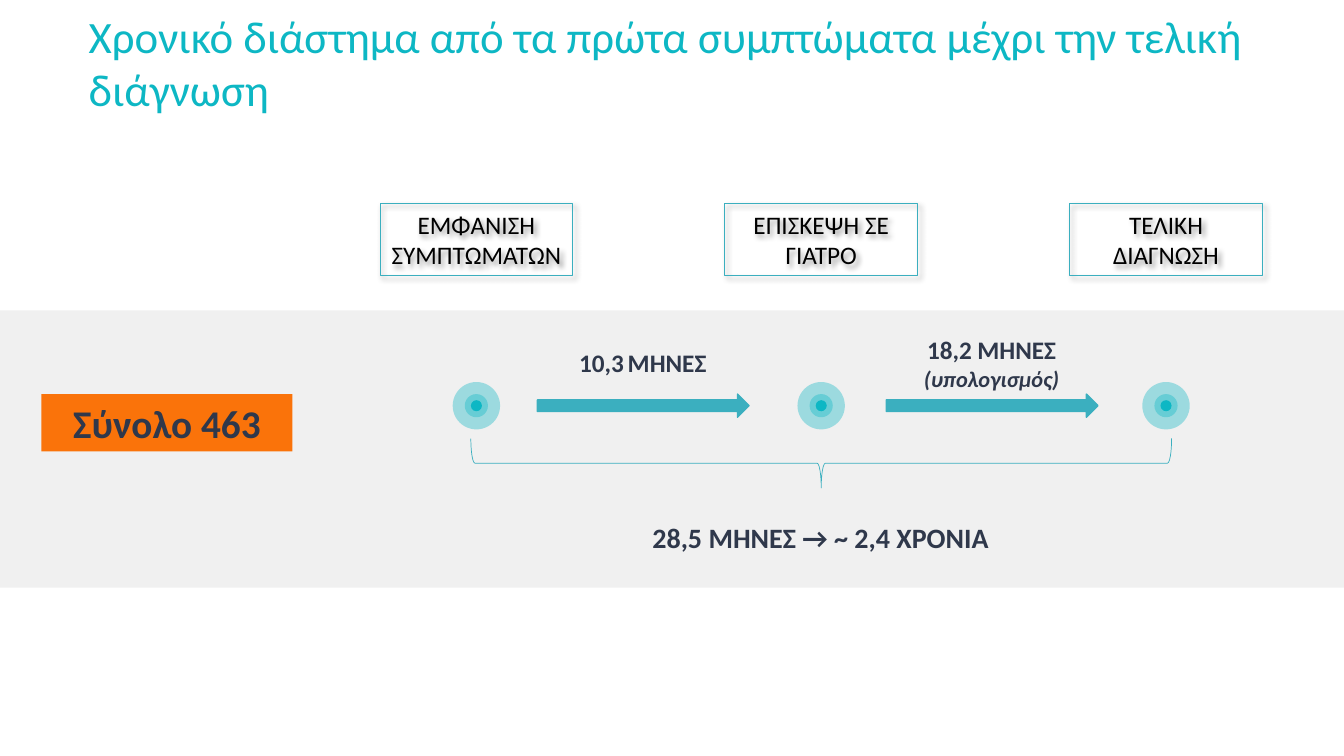
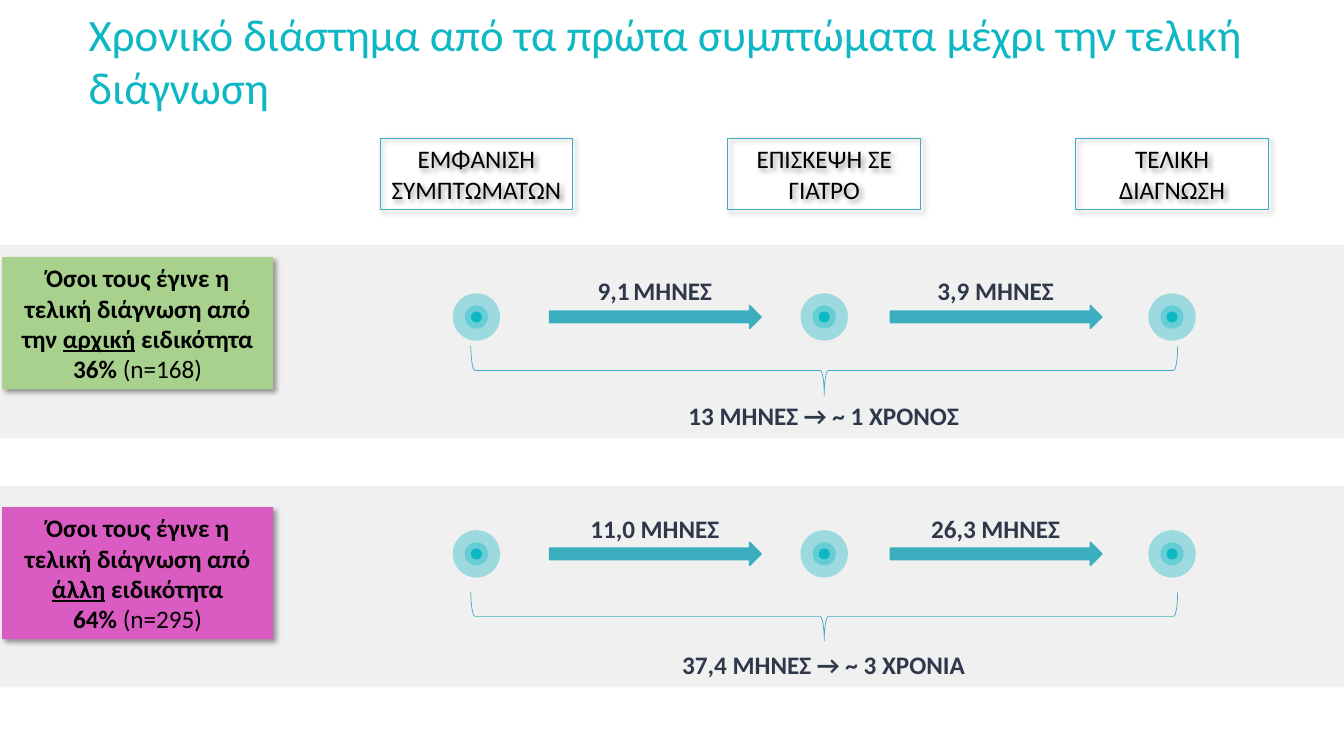
from dataclasses import dataclass

from lxml.etree import SubElement
from pptx import Presentation
from pptx.dml.color import RGBColor
from pptx.enum.shapes import MSO_SHAPE as SHAPE
from pptx.enum.text import MSO_ANCHOR as ANCHOR, MSO_AUTO_SIZE as AUTO, PP_ALIGN as ALIGN
from pptx.oxml.ns import qn
from pptx.util import Pt

PX = 9144
SLIDE_W, SLIDE_H = 1333, 750
FONT = "Calibri"
BLACK = RGBColor(0x00, 0x00, 0x00)
INK = RGBColor(0x2F, 0x38, 0x4B)
TURQUOISE = RGBColor(0x0D, 0xB7, 0xC4)
TEAL = RGBColor(0x3B, 0xAF, 0xBF)
BAND = RGBColor(0xF0, 0xF0, 0xF0)
ORANGE = RGBColor(0xFA, 0x73, 0x0A)
GREEN = RGBColor(0xA9, 0xD1, 0x8E)
PINK = RGBColor(0xDA, 0x5C, 0xC2)

TITLE = "Χρονικό διάστημα από τα πρώτα συμπτώματα μέχρι την τελική διάγνωση"
STAGES = ["ΕΜΦΑΝΙΣΗ ΣΥΜΠΤΩΜΑΤΩΝ", "ΕΠΙΣΚΕΨΗ ΣΕ ΓΙΑΤΡΟ", "ΤΕΛΙΚΗ ΔΙΑΓΝΩΣΗ"]
STAGE_X, STAGE_W, STAGE_H = 377, 191, 71
DOT, DOT_RINGS = 47, [(47, 37), (23, 37), (11, None)]
ARROW_W, ARROW_H = 210, 23
LABEL_W, LABEL_H = 199, 40
BRACE_H, BRACE_OVERHANG = 49, 11
TOTAL_W = 390


@dataclass
class Tag:
    """Coloured caption at the left of a lane, placed relative to its band."""
    box: tuple
    color: RGBColor
    paragraphs: list
    size: int = 18
    ink: RGBColor = BLACK
    shadow: bool = True


@dataclass
class Lane:
    """One timeline band; vertical positions are relative to the band's top."""
    top: int
    height: int
    dot_y: int
    brace_y: int
    total_y: int
    label_ys: tuple
    labels: list
    total: str
    tag: Tag
    total_size: int = 18


def emu(*lengths):
    """Turn px into EMU."""
    return [round(v * PX) for v in lengths]


def write(shape, paragraphs, size, color, bold=False, align=ALIGN.CENTER, anchor=ANCHOR.TOP):
    """Fill a shape with paragraphs, each a string or a list of (text, font settings)."""
    tf = shape.text_frame
    tf.word_wrap = True
    tf.auto_size = AUTO.NONE
    tf.vertical_anchor = anchor
    for i, runs in enumerate(paragraphs):
        p = tf.add_paragraph() if i else tf.paragraphs[0]
        p.alignment = align
        for text, style in [(runs, {})] if isinstance(runs, str) else runs:
            r = p.add_run()
            r.text = text
            r.font.name, r.font.size, r.font.bold = FONT, Pt(size), bold
            r.font.color.rgb = color
            for key, value in style.items():
                setattr(r.font, key, value)
    return tf


def add_text(s, box, paragraphs, size, color=INK, bold=True):
    """Add a centred text box."""
    write(s.shapes.add_textbox(*emu(*box)), paragraphs, size, color, bold)


def add_shape(shapes, kind, box, fill=None, line=None, width=0.75, alpha=None, shadow=False):
    """Add a preset shape with its fill, line, transparency and shadow."""
    sp = shapes.add_shape(kind, *emu(*box))
    sp.shadow.inherit = False
    if fill is None:
        sp.fill.background()
    else:
        sp.fill.solid()
        sp.fill.fore_color.rgb = fill
    if line is None:
        sp.line.fill.background()
    else:
        sp.line.color.rgb = line
        sp.line.width = Pt(width)
    spPr = sp.element.spPr
    if alpha is not None:
        color = spPr.find(qn("a:solidFill")).find(qn("a:srgbClr"))
        SubElement(color, qn("a:alpha"), val=str(alpha * 1000))
    if shadow:
        outer = SubElement(spPr.find(qn("a:effectLst")), qn("a:outerShdw"),
                           blurRad=str(Pt(4)), dist=str(Pt(3)), dir="2700000",
                           algn="tl", rotWithShape="0")
        color = SubElement(outer, qn("a:srgbClr"), val=str(BLACK))
        SubElement(color, qn("a:alpha"), val="40000")
    return sp


def add_title(s, top):
    """Place and format the title placeholder."""
    sp = s.shapes.title
    sp.left, sp.top, sp.width, sp.height = emu(78, top, 1176, 128)
    tf = write(sp, [TITLE], 32, TURQUOISE, align=ALIGN.LEFT, anchor=ANCHOR.BOTTOM)
    tf.margin_left, tf.margin_top, tf.margin_right, tf.margin_bottom = emu(10, 10, 10, 10)
    tf.paragraphs[0].line_spacing = 1.0


def add_stages(s, top, step):
    """Draw the row of stage headings."""
    for i, stage in enumerate(STAGES):
        sp = add_shape(s.shapes, SHAPE.RECTANGLE, (STAGE_X + i * step, top, STAGE_W, STAGE_H),
                       line=TEAL, shadow=True)
        write(sp, [stage], 18, BLACK, anchor=ANCHOR.MIDDLE)


def add_dot(s, left, top):
    """Draw a milestone of concentric discs as one group."""
    group = s.shapes.add_group_shape()
    for size, alpha in DOT_RINGS:
        inset = (DOT - size) // 2
        add_shape(group.shapes, SHAPE.OVAL, (left + inset, top + inset, size, size),
                  TURQUOISE, alpha=alpha)


def add_brace(s, left, top, width):
    """Draw a horizontal brace that points down."""
    x, y = left + (width - BRACE_H) / 2, top + (BRACE_H - width) / 2
    sp = add_shape(s.shapes, SHAPE.LEFT_BRACE, (x, y, BRACE_H, width), line=TEAL, width=0.5)
    sp.rotation = 270


def add_tag(s, lane_top, tag):
    """Draw the caption of a lane."""
    x, y, w, h = tag.box
    sp = add_shape(s.shapes, SHAPE.RECTANGLE, (x, lane_top + y, w, h), tag.color, shadow=tag.shadow)
    write(sp, tag.paragraphs, tag.size, tag.ink, bold=True, anchor=ANCHOR.MIDDLE)


def add_lane(s, lane, step, arrow_xs):
    """Draw a band with its milestones, arrows, brace, total and caption."""
    add_shape(s.shapes, SHAPE.RECTANGLE, (0, lane.top, SLIDE_W, lane.height), BAND)
    dot_x, dot_top = STAGE_X + (STAGE_W - DOT) // 2, lane.top + lane.dot_y
    for i in range(len(STAGES)):
        add_dot(s, dot_x + i * step, dot_top)
    for x, y, label in zip(arrow_xs, lane.label_ys, lane.labels):
        add_shape(s.shapes, SHAPE.RIGHT_ARROW, (x, dot_top + 12, ARROW_W, ARROW_H),
                  TEAL, TEAL, 1)
        add_text(s, (x + 5, lane.top + y, LABEL_W, LABEL_H * len(label)), label, 18)
    brace_w = 2 * step + BRACE_OVERHANG
    center = dot_x + DOT // 2 + step
    add_brace(s, center - brace_w // 2, lane.top + lane.brace_y, brace_w)
    add_text(s, (center - TOTAL_W // 2, lane.top + lane.total_y, TOTAL_W, LABEL_H),
             [lane.total], lane.total_size)
    add_tag(s, lane.top, lane.tag)


def add_timeline(prs, title_top, stage_top, step, arrow_xs, lanes):
    """Build one timeline slide."""
    s = prs.slides.add_slide(prs.slide_layouts[5])
    add_title(s, title_top)
    add_stages(s, stage_top, step)
    for lane in lanes:
        add_lane(s, lane, step, arrow_xs)


def months(number):
    """Return a label whose number and unit are set close together."""
    return [[(number, {}), (" ", {"size": Pt(12)}), ("ΜΗΝΕΣ", {})]]


def main():
    """Build and save the presentation."""
    prs = Presentation()
    prs.slide_width, prs.slide_height = emu(SLIDE_W, SLIDE_H)
    plain, underlined = {"bold": False}, {"underline": True}

    everyone = Lane(
        308, 275, 71, 127, 203, (32, 19),
        [months("10,3"),
         ["18,2 ΜΗΝΕΣ", [("(υπολογισμός)", {"size": Pt(16), "italic": True})]]],
        "28,5 ΜΗΝΕΣ → ~ 2,4 ΧΡΟΝΙΑ",
        Tag((41, 83, 249, 57), ORANGE, ["Σύνολο 463"], 28, INK, False), 20)
    first_specialty = Lane(
        243, 192, 48, 100, 149, (25, 25), [months("9,1"), ["3,9 ΜΗΝΕΣ"]],
        "13 ΜΗΝΕΣ → ~ 1 ΧΡΟΝΟΣ",
        Tag((2, 12, 269, 131), GREEN,
            [[("Όσοι τους έγινε η τελική διάγνωση από την ", {}), ("αρχική", underlined),
              (" ειδικότητα 36% ", {}), ("(n=168)", plain)]]))
    other_specialty = Lane(
        482, 200, 44, 105, 157, (22, 22), [["11,0 ΜΗΝΕΣ"], ["26,3 ΜΗΝΕΣ"]],
        "37,4 ΜΗΝΕΣ → ~ 3 ΧΡΟΝΙΑ",
        Tag((2, 21, 269, 131), PINK,
            [[("Όσοι τους έγινε η τελική διάγνωση από ", {}), ("άλλη", underlined),
              (" ειδικότητα", {})],
             [("64% ", {}), ("(n=295)", plain)]]))

    add_timeline(prs, -3, 202, 342, (533, 879), [everyone])
    add_timeline(prs, -5, 137, 345, (545, 883), [first_specialty, other_specialty])
    prs.save("out.pptx")


if __name__ == "__main__":
    main()
